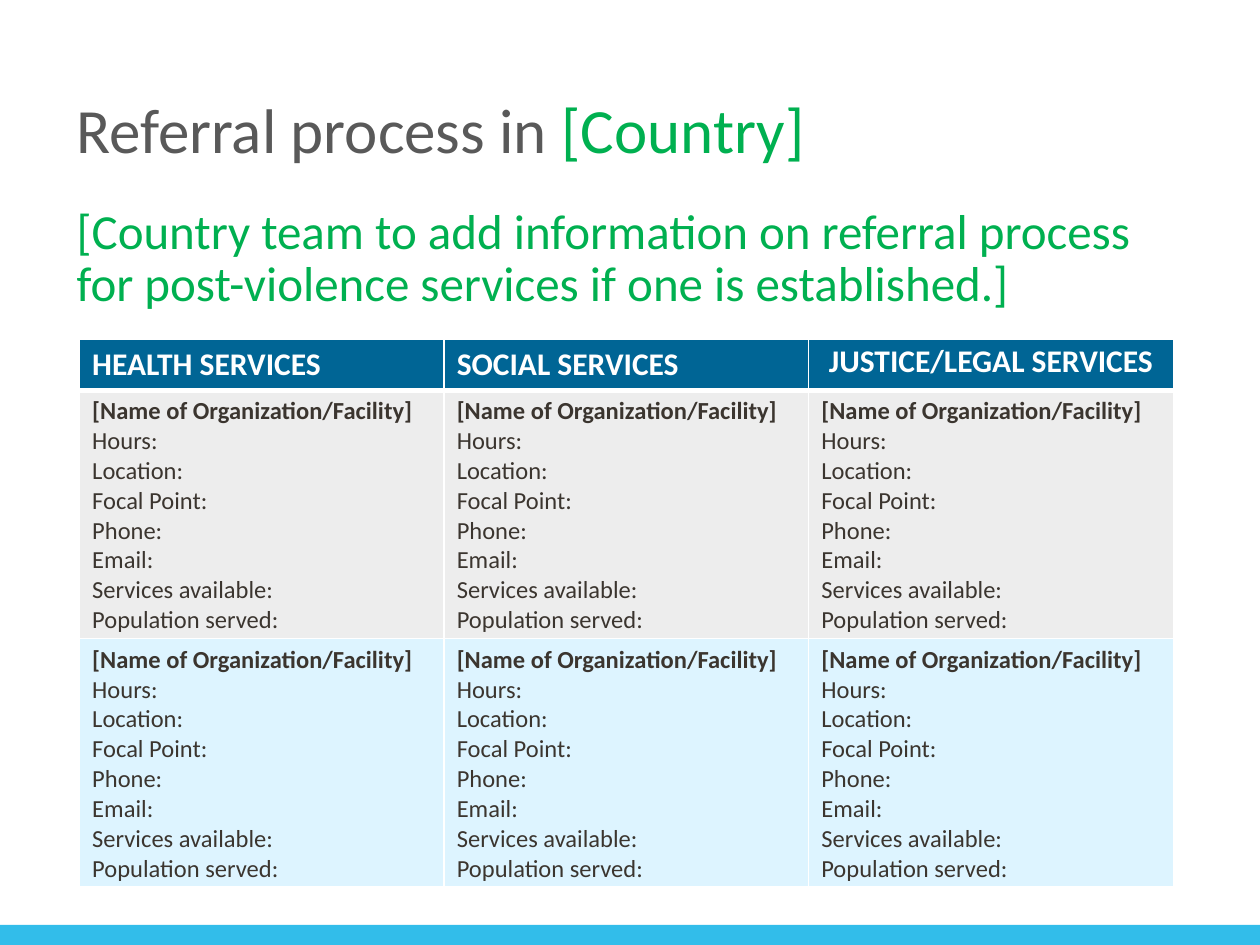
"""Build the referral process slide with its table of services."""
import dataclasses
import typing

import lxml.etree
import pptx
import pptx.dml.color
import pptx.enum.shapes
import pptx.enum.text
import pptx.oxml.ns
import pptx.util

Pt = pptx.util.Pt
Align = pptx.enum.text.PP_ALIGN
Anchor = pptx.enum.text.MSO_ANCHOR


@dataclasses.dataclass(frozen=True)
class Theme:
    font: str = "Calibri"
    title_color: str = "595959"
    prompt_color: str = "00B050"
    detail_color: str = "3B352F"
    white: str = "FFFFFF"
    header_fill: str = "006595"
    row_fills: tuple[str, ...] = ("EDEDED", "DDF4FF")
    bar_fill: str = "32BDEA"
    title_size: float = 36
    prompt_size: float = 28
    header_size: float = 18
    detail_size: float = 14


class Box(typing.NamedTuple):
    left: float
    top: float
    width: float
    height: float

    def lengths(self) -> list[pptx.util.Length]:
        return [Pt(value) for value in self]


class Service(typing.NamedTuple):
    heading: str
    align: typing.Optional[Align] = None
    line_spacing: typing.Optional[float] = None


THEME = Theme()
TITLE_BOX = Box(36.72, 35.28, 647.28, 76.32)
PROMPT_BOX = Box(36.72, 114.48, 647.28, 384.48)
TABLE_BOX = Box(45.5, 194, 624.96, 313)
BAR_BOX = Box(0, 528.48, 720, 14.4)
HEADER_HEIGHT = 29
SERVICES = (
    Service("HEALTH SERVICES"),
    Service("SOCIAL SERVICES"),
    Service("JUSTICE/LEGAL SERVICES", Align.CENTER, 20),
)
FACILITY = "[Name of Organization/Facility]"
DETAILS = (
    "Hours:", "Location:", "Focal Point:", "Phone:", "Email:",
    "Services available:", "Population served:",
)


def rgb(color: str) -> pptx.dml.color.RGBColor:
    return pptx.dml.color.RGBColor.from_string(color)


def write(paragraph, text: str, *, size: float, color: str, bold: bool = False,
          align: typing.Optional[Align] = None,
          line_spacing: typing.Optional[float] = None) -> None:
    run = paragraph.add_run()
    run.text = text
    run.font.name = THEME.font
    run.font.size = Pt(size)
    run.font.bold = bold
    run.font.color.rgb = rgb(color)
    if align is not None:
        paragraph.alignment = align
    if line_spacing is not None:
        paragraph.line_spacing = Pt(line_spacing)


def add_text_area(slide, box: Box, anchor: Anchor):
    frame = slide.shapes.add_textbox(*box.lengths()).text_frame
    frame.word_wrap = True
    frame.vertical_anchor = anchor
    return frame.paragraphs[0]


def style_cell(cell, fill: str, bottom_width: float = 1) -> None:
    cell.fill.solid()
    cell.fill.fore_color.rgb = rgb(fill)
    properties = cell._tc.get_or_add_tcPr()
    qn = pptx.oxml.ns.qn
    widths = {"a:lnL": 1, "a:lnR": 1, "a:lnT": 1, "a:lnB": bottom_width}
    for position, (side, width) in enumerate(widths.items()):
        border = lxml.etree.Element(qn(side), w=str(Pt(width)))
        border_fill = lxml.etree.SubElement(border, qn("a:solidFill"))
        lxml.etree.SubElement(border_fill, qn("a:srgbClr"), val=THEME.white)
        properties.insert(position, border)


def fill_facility(cell, fill: str) -> None:
    style_cell(cell, fill)
    frame = cell.text_frame
    style = {"size": THEME.detail_size, "color": THEME.detail_color}
    write(frame.paragraphs[0], FACILITY, bold=True, **style)
    for detail in DETAILS:
        write(frame.add_paragraph(), detail, **style)


def add_services_table(slide) -> None:
    row_count = len(THEME.row_fills)
    table = slide.shapes.add_table(
        row_count + 1, len(SERVICES), *TABLE_BOX.lengths()).table
    table.rows[0].height = Pt(HEADER_HEIGHT)
    for row in range(1, row_count + 1):
        table.rows[row].height = Pt((TABLE_BOX.height - HEADER_HEIGHT) / row_count)
    for column, service in enumerate(SERVICES):
        table.columns[column].width = Pt(TABLE_BOX.width / len(SERVICES))
        header = table.cell(0, column)
        style_cell(header, THEME.header_fill, bottom_width=3)
        write(header.text_frame.paragraphs[0], service.heading,
              size=THEME.header_size, color=THEME.white, bold=True,
              align=service.align, line_spacing=service.line_spacing)
        for row, fill in enumerate(THEME.row_fills, start=1):
            fill_facility(table.cell(row, column), fill)


def add_bar(slide) -> None:
    bar = slide.shapes.add_shape(
        pptx.enum.shapes.MSO_SHAPE.RECTANGLE, *BAR_BOX.lengths())
    bar.shadow.inherit = False
    bar.fill.solid()
    bar.fill.fore_color.rgb = rgb(THEME.bar_fill)
    bar.line.fill.background()


def main() -> None:
    presentation = pptx.Presentation()
    presentation.slide_width, presentation.slide_height = Pt(720), Pt(540)
    slide = presentation.slides.add_slide(presentation.slide_layouts[6])
    add_bar(slide)
    title = add_text_area(slide, TITLE_BOX, Anchor.MIDDLE)
    write(title, "Referral process in ", size=THEME.title_size, color=THEME.title_color)
    write(title, "[Country]", size=THEME.title_size, color=THEME.prompt_color)
    prompt = add_text_area(slide, PROMPT_BOX, Anchor.TOP)
    write(prompt, "[Country team to add information on referral process "
          "for post-violence services if one is established.]",
          size=THEME.prompt_size, color=THEME.prompt_color, line_spacing=30)
    add_services_table(slide)
    presentation.save("out.pptx")


if __name__ == "__main__":
    main()
